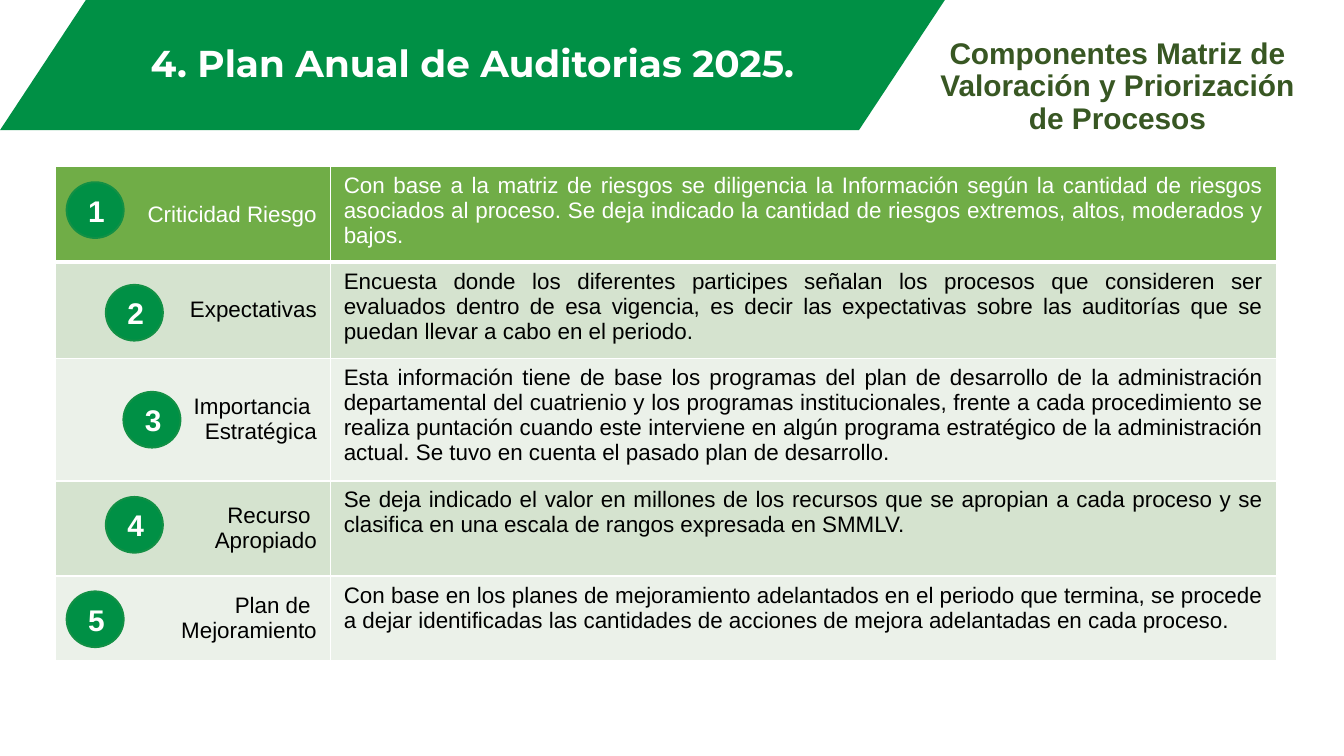
from lxml import etree
from pptx import Presentation
from pptx.dml.color import RGBColor
from pptx.enum import shapes, text
from pptx.oxml import ns
from pptx.util import Pt

GREEN, RIM, DARK, WHITE, BLACK = "009045", "129045", "385723", "FFFFFF", "000000"
HEADER, BANDS = "70AD47", ("D5E3CF", "EBF1E9")

TITLE = "4. Plan Anual de Auditorias 2025."
SUBTITLE = "Componentes Matriz de Valoración y Priorización de Procesos"

# label, description, row height, badge left, badge top
ROWS = [
    ("Criticidad Riesgo",
     "Con base a la matriz de riesgos se diligencia la Información según la cantidad de riesgos "
     "asociados al proceso. Se deja indicado la cantidad de riesgos extremos, altos, moderados y "
     "bajos.", 51.1, 35.7, 97.6),
    ("Expectativas",
     "Encuesta donde los diferentes participes señalan los procesos que consideren ser evaluados "
     "dentro de esa vigencia, es decir las expectativas sobre las auditorías que se puedan llevar "
     "a cabo en el periodo.", 51.6, 56.7, 152.6),
    ("Importancia \nEstratégica",
     "Esta información tiene de base los programas del plan de desarrollo de la administración "
     "departamental del cuatrienio y los programas institucionales, frente a cada procedimiento "
     "se realiza puntación cuando este interviene en algún programa estratégico de la "
     "administración actual. Se tuvo en cuenta el pasado plan de desarrollo.", 65.6, 66.1, 209.9),
    ("Recurso \nApropiado",
     "Se deja indicado el valor en millones de los recursos que se apropian a cada proceso y se "
     "clasifica en una escala de rangos expresada en SMMLV.", 51.1, 56.7, 266.2),
    ("Plan de \nMejoramiento",
     "Con base en los planes de mejoramiento adelantados en el periodo que termina, se procede a "
     "dejar identificadas las cantidades de acciones de mejora adelantadas en cada proceso.",
     45.4, 35.7, 316.8),
]
TABLE_LEFT, TABLE_TOP = 29.8, 89.3
COLUMNS = (147.2, 507.3)
BADGE_SIZE = (30.6, 29.9)


def rgb(value):
    return RGBColor.from_string(value)


def write(tf, content, size, color, align, bold=False, font="Arial", spacing=None):
    tf.text = content
    for p in tf.paragraphs:
        p.alignment = align
        if spacing:
            p.line_spacing = spacing
        for r in p.runs:
            r.font.size, r.font.bold, r.font.name = Pt(size), bold, font
            r.font.color.rgb = rgb(color)


def add_filled(s, kind, box, line=None):
    sp = s.shapes.add_shape(kind, *map(Pt, box))
    sp.shadow.inherit = False
    sp.fill.solid()
    sp.fill.fore_color.rgb = rgb(GREEN)
    if line:
        sp.line.color.rgb = rgb(line)
        sp.line.width = Pt(1)
    else:
        sp.line.fill.background()
    sp.text_frame.word_wrap = True
    sp.text_frame.vertical_anchor = text.MSO_ANCHOR.MIDDLE
    return sp


def style_cell(cell, fill, bottom, top):
    """Give the cell white borders (widths in points) and a solid fill."""
    tc_pr = cell._tc.get_or_add_tcPr()
    for side, width in (("L", 1), ("R", 1), ("T", top), ("B", bottom)):
        ln = etree.SubElement(tc_pr, ns.qn(f"a:ln{side}"), w=str(Pt(width)))
        solid = etree.SubElement(ln, ns.qn("a:solidFill"))
        etree.SubElement(solid, ns.qn("a:srgbClr"), val=WHITE)
    cell.fill.solid()
    cell.fill.fore_color.rgb = rgb(fill)


def add_components(s):
    table = s.shapes.add_table(
        len(ROWS), 2, Pt(TABLE_LEFT), Pt(TABLE_TOP), Pt(sum(COLUMNS)),
        Pt(sum(row[2] for row in ROWS))).table
    for column, width in zip(table.columns, COLUMNS):
        column.width = Pt(width)
    for i, (label, description, height, _, _) in enumerate(ROWS):
        table.rows[i].height = Pt(height)
        fill = BANDS[(i - 1) % 2] if i else HEADER
        for j, content in enumerate((label, description)):
            cell = table.cell(i, j)
            style_cell(cell, fill, bottom=1 if i else 3, top=3 if i == 1 else 1)
            write(cell.text_frame, content, 12, BLACK if i else WHITE,
                  text.PP_ALIGN.JUSTIFY if j else text.PP_ALIGN.RIGHT)
            cell.vertical_anchor = text.MSO_ANCHOR.TOP if j else text.MSO_ANCHOR.MIDDLE


def main():
    prs = Presentation()
    prs.slide_width, prs.slide_height = Pt(720), Pt(405)
    s = prs.slides.add_slide(prs.slide_layouts[6])
    center = text.PP_ALIGN.CENTER

    banner = add_filled(s, shapes.MSO_SHAPE.PARALLELOGRAM, (0, 0, 506.2, 69.8))
    banner.adjustments[0] = 0.66
    tf = banner.text_frame
    tf.margin_left = tf.margin_right = Pt(5)
    tf.margin_top = tf.margin_bottom = Pt(2.9)
    write(tf, TITLE, 20, WHITE, center, True, "Montserrat", 0.9)

    add_components(s)

    tf = s.shapes.add_textbox(Pt(486), Pt(17.3), Pt(225.4), Pt(59.8)).text_frame
    tf.word_wrap = True
    write(tf, SUBTITLE, 16, DARK, center, True, spacing=0.9)

    for number, (*_, left, top) in enumerate(ROWS, 1):
        badge = add_filled(s, shapes.MSO_SHAPE.OVAL, (left, top, *BADGE_SIZE), RIM)
        write(badge.text_frame, str(number), 16, WHITE, center, True)

    prs.save("out.pptx")


if __name__ == "__main__":
    main()
